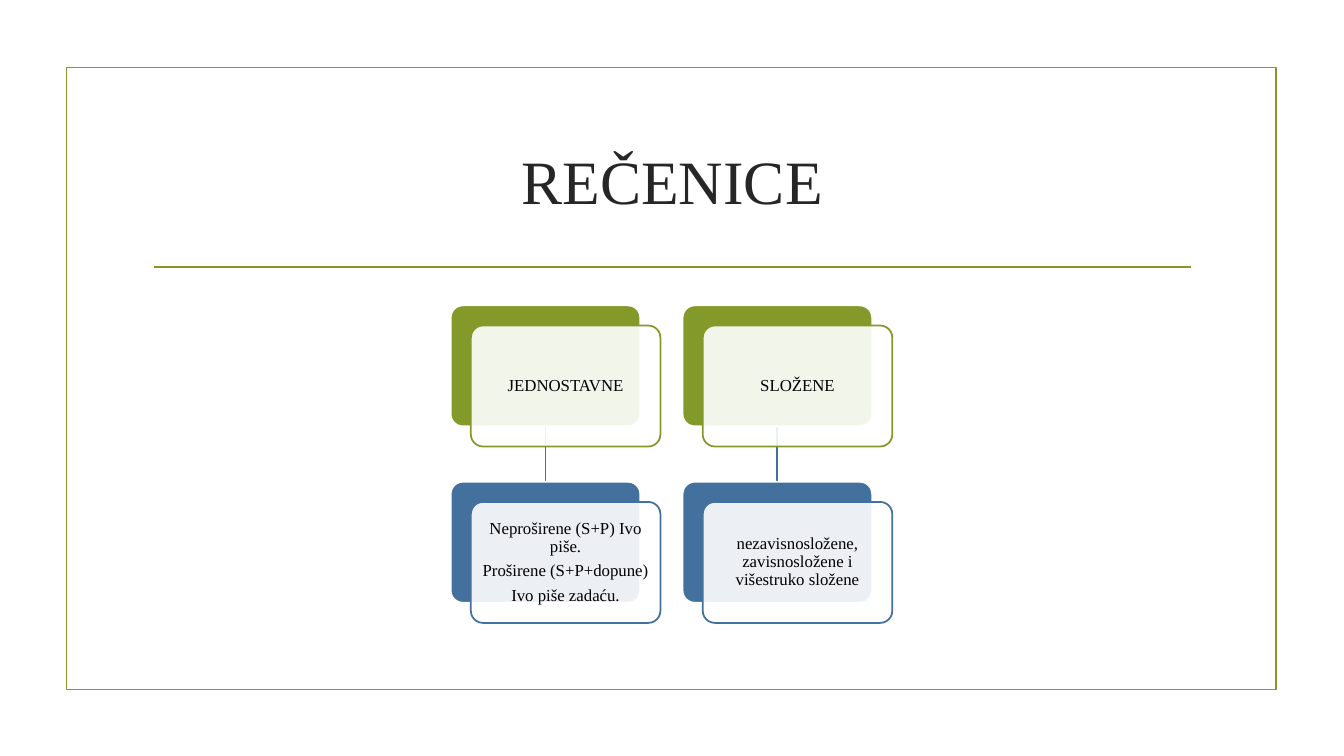
from lxml import etree
from pptx import Presentation
from pptx.dml.color import RGBColor
from pptx.enum.shapes import MSO_CONNECTOR, MSO_SHAPE
from pptx.enum.text import MSO_ANCHOR, PP_ALIGN
from pptx.oxml.ns import qn
from pptx.util import Inches, Pt

GREEN, BLUE, WHITE, BLACK, DARK = "83992A", "44709D", "FFFFFF", "000000", "262626"
FONT = "Times New Roman"
BRANCHES = [
    (["JEDNOSTAVNE"],
     ["Neproširene (S+P) Ivo piše.", "Proširene (S+P+dopune)", "Ivo piše zadaću."]),
    (["SLOŽENE"], ["nezavisnosložene, zavisnosložene i višestruko složene"]),
]
CARD_W, CARD_H = 1.88, 1.2
OFFSET = 0.2
COL_STEP, ROW_STEP = 2.3, 1.75


def rgb(color):
    return RGBColor.from_string(color)


def style_line(s, color):
    s.line.color.rgb = rgb(color)
    s.line.width = Pt(1.25)


def write(tf, lines, size, color, **paragraph_format):
    tf.word_wrap = True
    tf.vertical_anchor = MSO_ANCHOR.MIDDLE
    for i, line in enumerate(lines):
        p = tf.add_paragraph() if i else tf.paragraphs[0]
        p.alignment = PP_ALIGN.CENTER
        for name, value in paragraph_format.items():
            setattr(p, name, value)
        r = p.add_run()
        r.text = line
        for name, value in {"name": FONT, "size": Pt(size)}.items():
            setattr(r.font, name, value)
        r.font.color.rgb = rgb(color)


def add_box(shapes, kind, box, line):
    s = shapes.add_shape(kind, *map(Inches, box))
    s.shadow.inherit = False
    style_line(s, line)
    return s


def add_line(shapes, x1, y1, x2, y2, color):
    s = shapes.add_connector(MSO_CONNECTOR.STRAIGHT, *map(Inches, (x1, y1, x2, y2)))
    style_line(s, color)
    etree.SubElement(s._element.spPr, qn("a:effectLst"))
    return s


def add_card(shapes, left, top, lines, color):
    """Draw a solid plate with an offset translucent text plate; return the solid one."""
    back = add_box(shapes, MSO_SHAPE.ROUNDED_RECTANGLE, (left, top, CARD_W, CARD_H), WHITE)
    front = add_box(shapes, MSO_SHAPE.ROUNDED_RECTANGLE,
                    (left + OFFSET, top + OFFSET, CARD_W, CARD_H), color)
    for s, fill in ((back, color), (front, WHITE)):
        s.adjustments[0] = 0.1
        s.fill.solid()
        s.fill.fore_color.rgb = rgb(fill)
    tint = front._element.spPr.find(qn("a:solidFill"))[0]
    etree.SubElement(tint, qn("a:alpha"), val="90000")
    tf = front.text_frame
    for side in ("left", "top", "right", "bottom"):
        setattr(tf, f"margin_{side}", Inches(0.08))
    write(tf, lines, 12, BLACK, line_spacing=0.9, space_after=Pt(4.5))
    return back


def add_heading(slide, left, top, width, height):
    frame = add_box(slide.shapes, MSO_SHAPE.RECTANGLE, (left, top, width, height), GREEN)
    frame.fill.background()
    rule_y = top + 1.98
    add_line(slide.shapes, left + 0.87, rule_y, left + width - 0.85, rule_y, GREEN)
    title = slide.shapes.title
    box = {"left": left + 0.76, "top": top + 0.4, "width": width - 1.5, "height": 1.43}
    for name, value in box.items():
        setattr(title, name, Inches(value))
    write(title.text_frame, ["REČENICE"], 44, DARK)


def add_hierarchy(slide, left, top):
    for col, (head, detail) in enumerate(BRANCHES):
        x = left + col * COL_STEP
        mid = x + CARD_W / 2
        # The link comes first so that it lies behind both cards.
        link = add_line(slide.shapes, mid, top + CARD_H, mid, top + ROW_STEP, BLUE)
        upper = add_card(slide.shapes, x, top, head, GREEN)
        lower = add_card(slide.shapes, x, top + ROW_STEP, detail, BLUE)
        link.begin_connect(upper, 2)
        link.end_connect(lower, 0)


def main():
    prs = Presentation()
    prs.slide_width, prs.slide_height = Inches(13.33), Inches(7.5)
    slide = prs.slides.add_slide(prs.slide_layouts[5])
    add_heading(slide, 0.66, 0.67, 12, 6.17)
    add_hierarchy(slide, 4.47, 3.03)
    prs.save("out.pptx")


if __name__ == "__main__":
    main()
